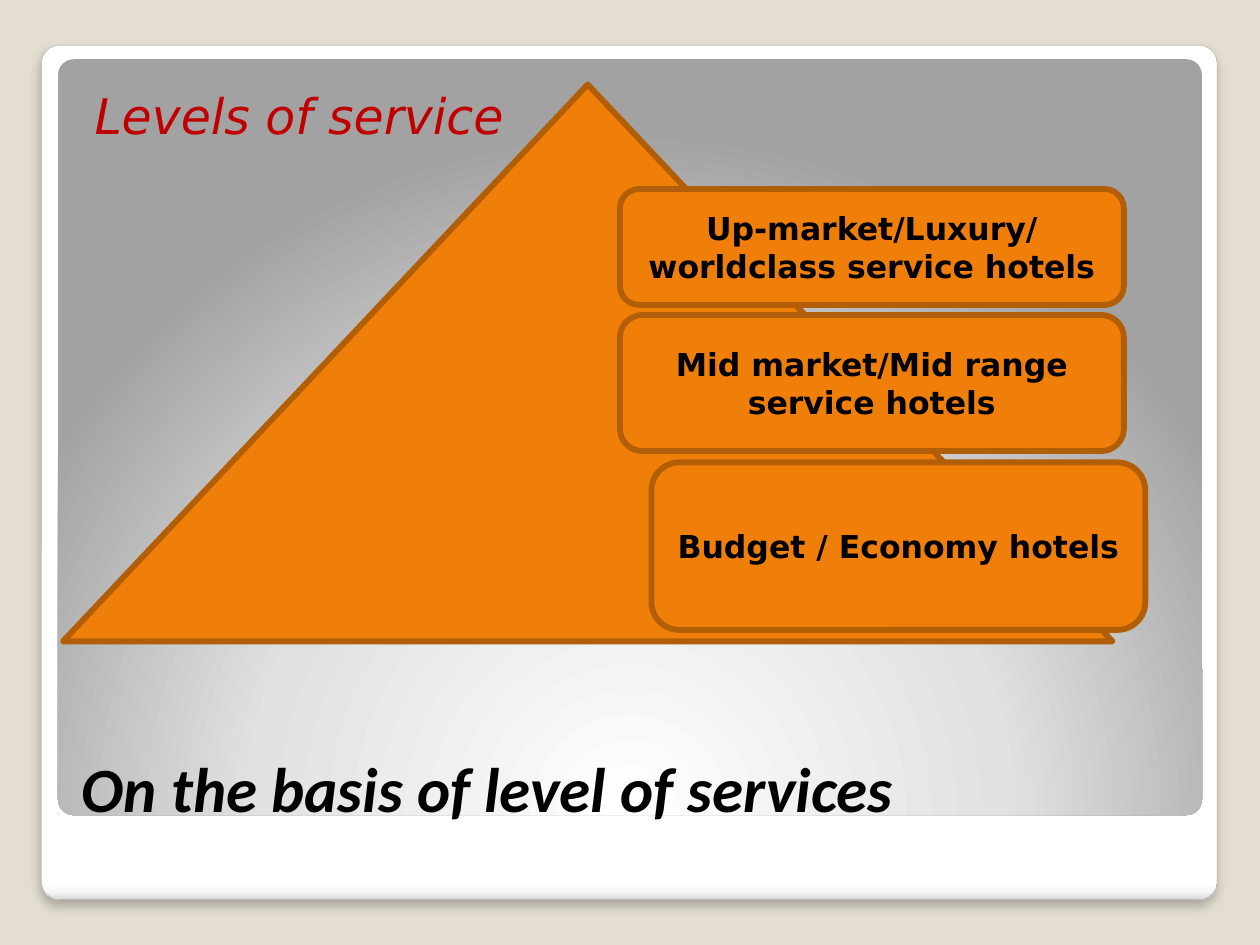
from lxml.etree import SubElement
from pptx import Presentation
from pptx.dml.color import RGBColor
from pptx.enum.shapes import MSO_SHAPE
from pptx.enum.text import MSO_ANCHOR, PP_ALIGN
from pptx.oxml.ns import qn
from pptx.util import Inches, Pt

ORANGE, BROWN = "F07F09", "B25E07"
TIERS = [
    ("Up-market/Luxury/worldclass service hotels", (4.42, 0.83, 4, 0.92)),
    ("Mid market/Mid range service hotels", (4.42, 1.83, 4, 1.08)),
    ("Budget / Economy hotels", (4.67, 3, 3.92, 1.33)),
]


def color(hex_code):
    """Turn a hex string into a colour."""
    return RGBColor.from_string(hex_code)


def add_node(parent, tag, **attributes):
    """Append a drawing element with the given attributes."""
    texts = {name: str(value) for name, value in attributes.items()}
    return SubElement(parent, qn(f"a:{tag}"), texts)


def add_block(page, kind, box, fill=None, line=None, width=3.35):
    """Add a preset shape without a shadow."""
    block = page.shapes.add_shape(kind, *map(Inches, box))
    block.shadow.inherit = False
    if fill:
        block.fill.solid()
        block.fill.fore_color.rgb = color(fill)
    if line:
        block.line.color.rgb = color(line)
        block.line.width = Pt(width)
    else:
        block.line.fill.background()
    return block


def start_gradient(block, stops):
    """Give a shape gradient stops and return the element that holds them."""
    block.fill.gradient()
    gradient = block._element.spPr.find(qn("a:gradFill"))
    for child in list(gradient):
        gradient.remove(child)
    stop_list = add_node(gradient, "gsLst")
    for percent, hex_code in stops:
        stop = add_node(stop_list, "gs", pos=percent * 1000)
        add_node(stop, "srgbClr", val=hex_code)
    return gradient


def write(frame, text, size, font, hex_code, bold=False, italic=False):
    """Write one styled run in the first paragraph and return the paragraph."""
    frame.word_wrap = True
    para = frame.paragraphs[0]
    span = para.add_run()
    span.text = text
    span.font.size = Pt(size)
    span.font.name = font
    span.font.bold = bold
    span.font.italic = italic
    span.font.color.rgb = color(hex_code)
    return para


def add_frame(page, box):
    """Draw the white card with its soft shadow and the grey panel inside."""
    left, top, width, height = box
    card = add_block(page, MSO_SHAPE.ROUNDED_RECTANGLE, box, line="A4A4A4", width=0.16)
    card.adjustments[0] = 0.021
    gradient = start_gradient(
        card, [(0, "FFFFFF"), (98, "FFFFFF"), (99, "F7F7F7"), (100, "DADADA")])
    add_node(gradient, "lin", ang=5400000, scaled=0)
    effects = card._element.spPr.find(qn("a:effectLst"))
    shadow = add_node(effects, "outerShdw", blurRad=Pt(6), dist=Pt(4),
                      dir=5400000, algn="t", rotWithShape=0)
    add_node(add_node(shadow, "srgbClr", val="000000"), "alpha", val=25000)

    panel = add_block(page, MSO_SHAPE.ROUNDED_RECTANGLE,
                      (left + 0.13, top + 0.11, width - 0.25, height - 0.78))
    panel.adjustments[0] = 0.021
    gradient = start_gradient(panel, [(0, "FFFFFF"), (55, "E1E1E1"), (100, "A2A2A2")])
    focus = add_node(gradient, "path", path="circle")
    add_node(focus, "fillToRect", l=50000, t=175000, r=50000, b=-75000)


def add_title(page, box):
    """Place the slide title at the bottom of its box."""
    frame = page.shapes.add_textbox(*map(Inches, box)).text_frame
    frame.vertical_anchor = MSO_ANCHOR.BOTTOM
    write(frame, "On the basis of level of services", 36, "Calibri", "000000", True, True)


def add_heading(page, box):
    """Place the red heading at the top of its box."""
    frame = page.shapes.add_textbox(*map(Inches, box)).text_frame
    frame.margin_left = Inches(0.2)
    frame.margin_top = Inches(0.1)
    para = write(frame, "Levels of service", 28, "DejaVu Sans", "C00000", italic=True)
    para.space_before = Pt(2.5)


def add_pyramid(page, box):
    """Draw the triangle and the service tiers over its right side."""
    add_block(page, MSO_SHAPE.FLOWCHART_EXTRACT, box, ORANGE, BROWN)
    for text, (across, down, width, height) in TIERS:
        tier_box = (box[0] + across, box[1] + down, width, height)
        tier = add_block(page, MSO_SHAPE.ROUNDED_RECTANGLE, tier_box, ORANGE, BROWN)
        tier.text_frame.vertical_anchor = MSO_ANCHOR.MIDDLE
        para = write(tier.text_frame, text, 18, "DejaVu Sans", "000000", bold=True)
        para.alignment = PP_ALIGN.CENTER


def main():
    """Build the slide and save it."""
    deck = Presentation()
    deck.slide_width, deck.slide_height = Inches(10), Inches(7.5)
    page = deck.slides.add_slide(deck.slide_layouts[6])
    page.background.fill.solid()
    page.background.fill.fore_color.rgb = color("E3DED1")
    add_frame(page, (0.33, 0.36, 9.33, 6.78))
    add_title(page, (0.55, 5.45, 8.95, 1.15))
    add_heading(page, (0.55, 0.58, 8.95, 4.58))
    add_pyramid(page, (0.5, 0.67, 8.33, 4.42))
    deck.save("out.pptx")


if __name__ == "__main__":
    main()
